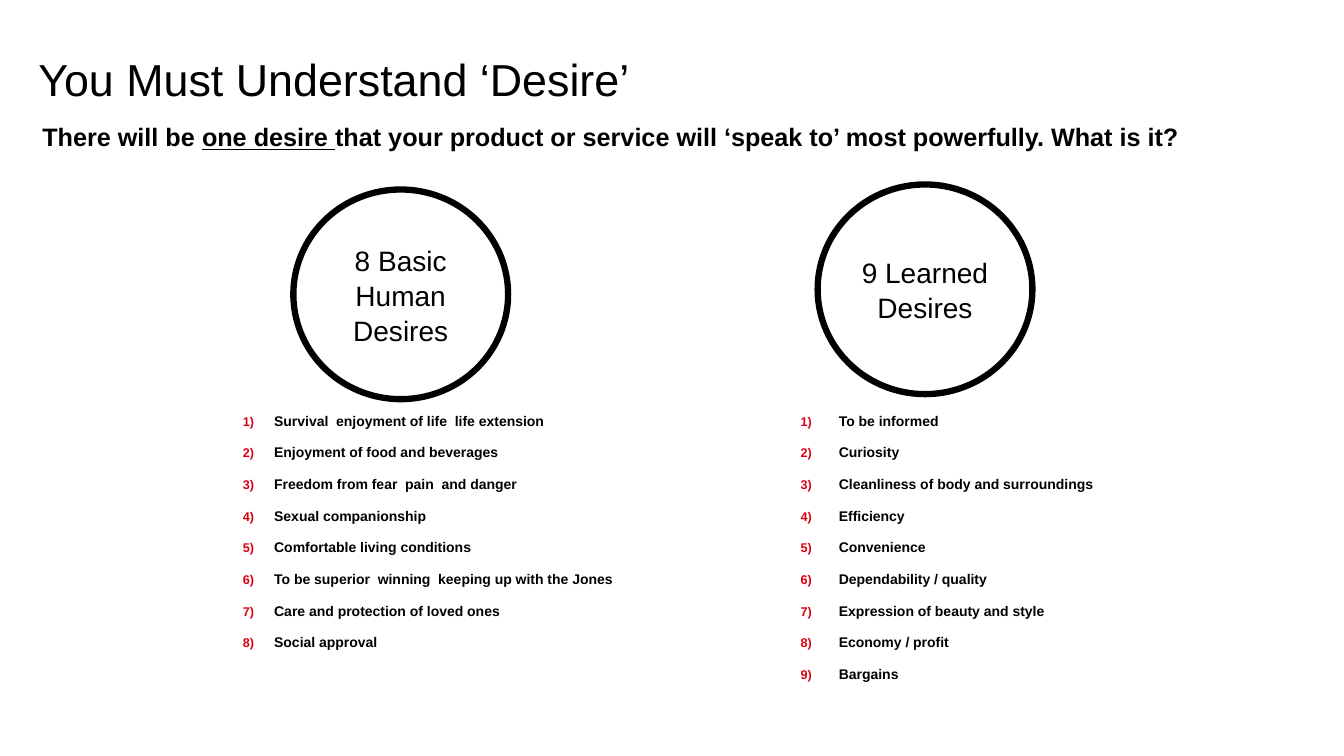
from pptx import Presentation
from pptx.dml.color import RGBColor
from pptx.enum.shapes import MSO_SHAPE as Shape
from pptx.enum.text import MSO_ANCHOR as Anchor, PP_ALIGN as Align
from pptx.oxml.ns import qn
from pptx.util import Inches, Pt
from lxml.etree import SubElement

# Content
TITLE = "You Must Understand ‘Desire’"
SUBTITLE = [  # text, underlined
    ("There will be ", False),
    ("one desire ", True),
    ("that your product or service will ‘speak to’ most powerfully. What is it?", False),
]
GROUPS = [
    {
        "heading": "8 Basic Human Desires",
        "circle": (2.91, 1.88),
        "list": (2.41, 4.08, 5, 2.51),
        "indent": 0.31,
        "desires": [
            "Survival  enjoyment of life  life extension",
            "Enjoyment of food and beverages",
            "Freedom from fear  pain  and danger",
            "Sexual companionship",
            "Comfortable living conditions",
            "To be superior  winning  keeping up with the Jones",
            "Care and protection of loved ones",
            "Social approval",
        ],
    },
    {
        "heading": "9 Learned Desires",
        "circle": (8.11, 1.83),
        "list": (7.94, 4.08, 4.87, 2.68),
        "indent": 0.38,
        "desires": [
            "To be informed",
            "Curiosity",
            "Cleanliness of body and surroundings",
            "Efficiency",
            "Convenience",
            "Dependability / quality",
            "Expression of beauty and style",
            "Economy / profit",
            "Bargains",
        ],
    },
]
CIRCLE_SIZE = (2.13, 2.08)
BLACK, WHITE, RED = "000000", "FFFFFF", "DB0011"


def color(value):
    return RGBColor.from_string(value)


def prepare_frame(shape):
    frame = shape.text_frame
    frame.word_wrap = True
    frame.margin_left = frame.margin_top = frame.margin_right = frame.margin_bottom = 0
    return frame


def add_text_box(slide, box):
    return prepare_frame(slide.shapes.add_textbox(*map(Inches, box)))


def style(paragraph, size, bold=False):
    paragraph.line_spacing = 1.05
    paragraph.font.name = "Arial"
    paragraph.font.size = Pt(size)
    paragraph.font.bold = bold
    paragraph.font.color.rgb = color(BLACK)


def number(paragraph, indent):
    properties = paragraph._p.get_or_add_pPr()
    properties.set("marL", str(Inches(indent)))
    properties.set("indent", str(-Inches(indent)))
    bullet_color = SubElement(properties, qn("a:buClr"))
    SubElement(bullet_color, qn("a:srgbClr"), val=RED)
    SubElement(properties, qn("a:buSzPct"), val="90000")
    SubElement(properties, qn("a:buFont"), typeface="Arial")
    SubElement(properties, qn("a:buAutoNum"), type="arabicParenR")


def add_circle(slide, heading, position):
    circle = slide.shapes.add_shape(Shape.OVAL, *map(Inches, position + CIRCLE_SIZE))
    circle.shadow.inherit = False
    circle.fill.solid()
    circle.fill.fore_color.rgb = color(WHITE)
    circle.line.color.rgb = color(BLACK)
    circle.line.width = Pt(4.5)
    frame = prepare_frame(circle)
    frame.vertical_anchor = Anchor.MIDDLE
    paragraph = frame.paragraphs[0]
    paragraph.text = heading
    paragraph.alignment = Align.CENTER
    style(paragraph, 20)


def add_numbered_list(slide, desires, box, indent):
    frame = add_text_box(slide, box)
    for index, desire in enumerate(desires):
        paragraph = frame.add_paragraph() if index else frame.paragraphs[0]
        paragraph.text = desire
        number(paragraph, indent)
        style(paragraph, 10, bold=True)
        if index:
            paragraph.space_before = Pt(10)


presentation = Presentation()
presentation.slide_width, presentation.slide_height = Inches(13.33), Inches(7.5)
slide = presentation.slides.add_slide(presentation.slide_layouts[6])

# Title and subtitle
title = add_text_box(slide, (0.38, 0.49, 12, 0.67)).paragraphs[0]
title.text = TITLE
style(title, 32)

subtitle = add_text_box(slide, (0.42, 1.19, 12.5, 1.07)).paragraphs[0]
for text, underlined in SUBTITLE:
    run = subtitle.add_run()
    run.text = text
    if underlined:
        run.font.underline = True
style(subtitle, 18, bold=True)

# Circles with their numbered lists
for group in GROUPS:
    add_numbered_list(slide, group["desires"], group["list"], group["indent"])
    add_circle(slide, group["heading"], group["circle"])

presentation.save("out.pptx")
